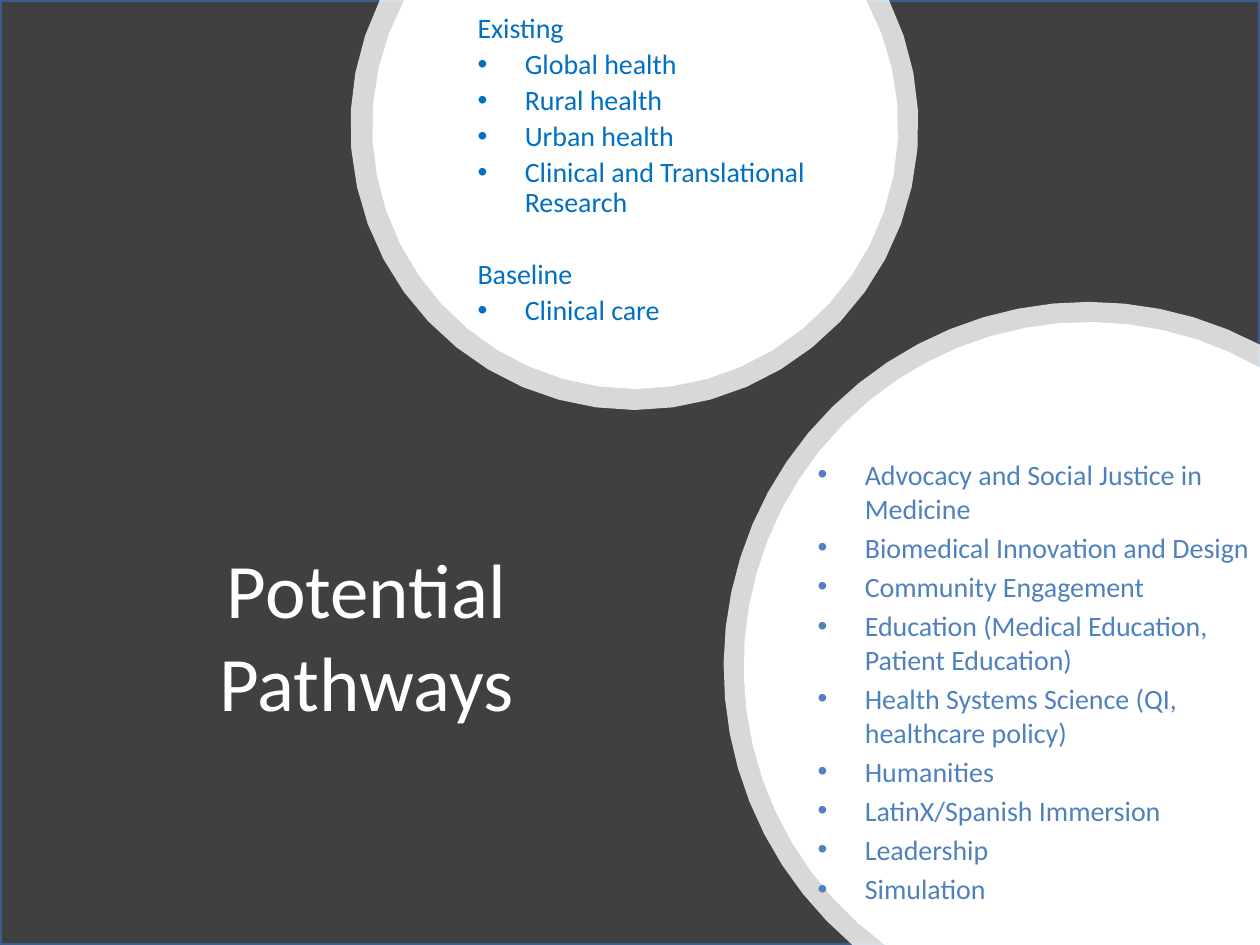
"""Build the Potential Pathways slide with two circles running off its edges."""
from math import acos, asin, cos, pi, sin

from lxml.etree import SubElement
from pptx import Presentation
from pptx.dml.color import RGBColor
from pptx.enum.shapes import MSO_SHAPE as Shape
from pptx.enum.text import MSO_ANCHOR as Anchor, MSO_AUTO_SIZE as AutoSize, PP_ALIGN as Align
from pptx.oxml.ns import qn
from pptx.util import Pt

WIDTH, HEIGHT = 720, 540
ARC_STEPS = 30


def paint(color_format, color):
    color_format.rgb = RGBColor.from_string(color)


def write(box, place, lines, size, color, bottom=3.6):
    box.left, box.top, box.width, box.height = [Pt(length) for length in place]
    frame = box.text_frame
    frame.text = "\n".join(lines)
    frame.word_wrap = True
    frame.auto_size = AutoSize.NONE
    frame.vertical_anchor = Anchor.MIDDLE
    frame.margin_bottom = Pt(bottom)
    for para in frame.paragraphs:
        for span in para.runs:
            span.font.size = Pt(size)
            span.font.name = "Calibri"
            paint(span.font.color, color)
    box.element.getparent().append(box.element)


deck = Presentation()
deck.slide_width, deck.slide_height = Pt(WIDTH), Pt(HEIGHT)
page = deck.slides.add_slide(deck.slide_layouts[3])
title, current, proposed = page.placeholders

backdrop = page.shapes.add_shape(Shape.RECTANGLE, 0, 0, Pt(WIDTH), Pt(HEIGHT))
backdrop.shadow.inherit = False
backdrop.fill.solid()
paint(backdrop.fill.fore_color, "404040")
paint(backdrop.line.color, "3A5F8C")
backdrop.line.width = Pt(2)

circles = [
    (622, 381, 208.5, 80),
    (622, 381, 197, 100),
    (362.5, 72, 162.3, 80),
    (363, 72, 150.3, 100),
]
for center_x, center_y, radius, opacity in circles:
    if center_x + radius > WIDTH:
        start = pi - asin((HEIGHT - center_y) / radius)
        end = 2 * pi - acos((WIDTH - center_x) / radius)
        corners = [(Pt(WIDTH), Pt(HEIGHT))]
    else:
        start = -asin(center_y / radius)
        end = pi - start
        corners = []
    angles = [start + (end - start) * step / ARC_STEPS for step in range(ARC_STEPS + 1)]
    outline = [
        (Pt(center_x + radius * cos(angle)), Pt(center_y + radius * sin(angle)))
        for angle in angles
    ]
    builder = page.shapes.build_freeform(*outline[0])
    builder.add_line_segments(outline[1:] + corners, close=True)
    circle = builder.convert_to_shape()
    circle.shadow.inherit = False
    circle.line.fill.background()
    circle.fill.solid()
    paint(circle.fill.fore_color, "FFFFFF")
    if opacity < 100:
        fill_color = circle.element.spPr.find(qn("a:solidFill"))[0]
        SubElement(fill_color, qn("a:alpha"), val=str(opacity * 1000))

write(title, (54.7, 306, 309.6, 113), ["Potential Pathways"], 44, "FFFFFF")
title.text_frame.paragraphs[0].alignment = Align.CENTER

current_lines = [
    "Existing",
    "Global health",
    "Rural health",
    "Urban health",
    "Clinical and Translational Research",
    "Baseline",
    "Clinical care",
]
write(current, (265.7, 20.2, 223.2, 185), current_lines, 16, "0070C0", bottom=34)
for para in current.text_frame.paragraphs:
    para.line_spacing = 0.9
    if para.text == "Baseline":
        para.space_before = Pt(24)
    if para.text in ("Existing", "Baseline"):
        properties = para._p.get_or_add_pPr()
        properties.set("marL", "0")
        properties.set("indent", "0")
        SubElement(properties, qn("a:buNone"))

proposed_lines = [
    "Advocacy and Social Justice in Medicine",
    "Biomedical Innovation and Design",
    "Community Engagement",
    "Education (Medical Education, Patient Education)",
    "Health Systems Science (QI, healthcare policy)",
    "Humanities",
    "LatinX/Spanish Immersion",
    "Leadership",
    "Simulation",
]
write(proposed, (460, 254.2, 279.4, 285.8), proposed_lines, 16, "4F81BD", bottom=19)

deck.save("out.pptx")
